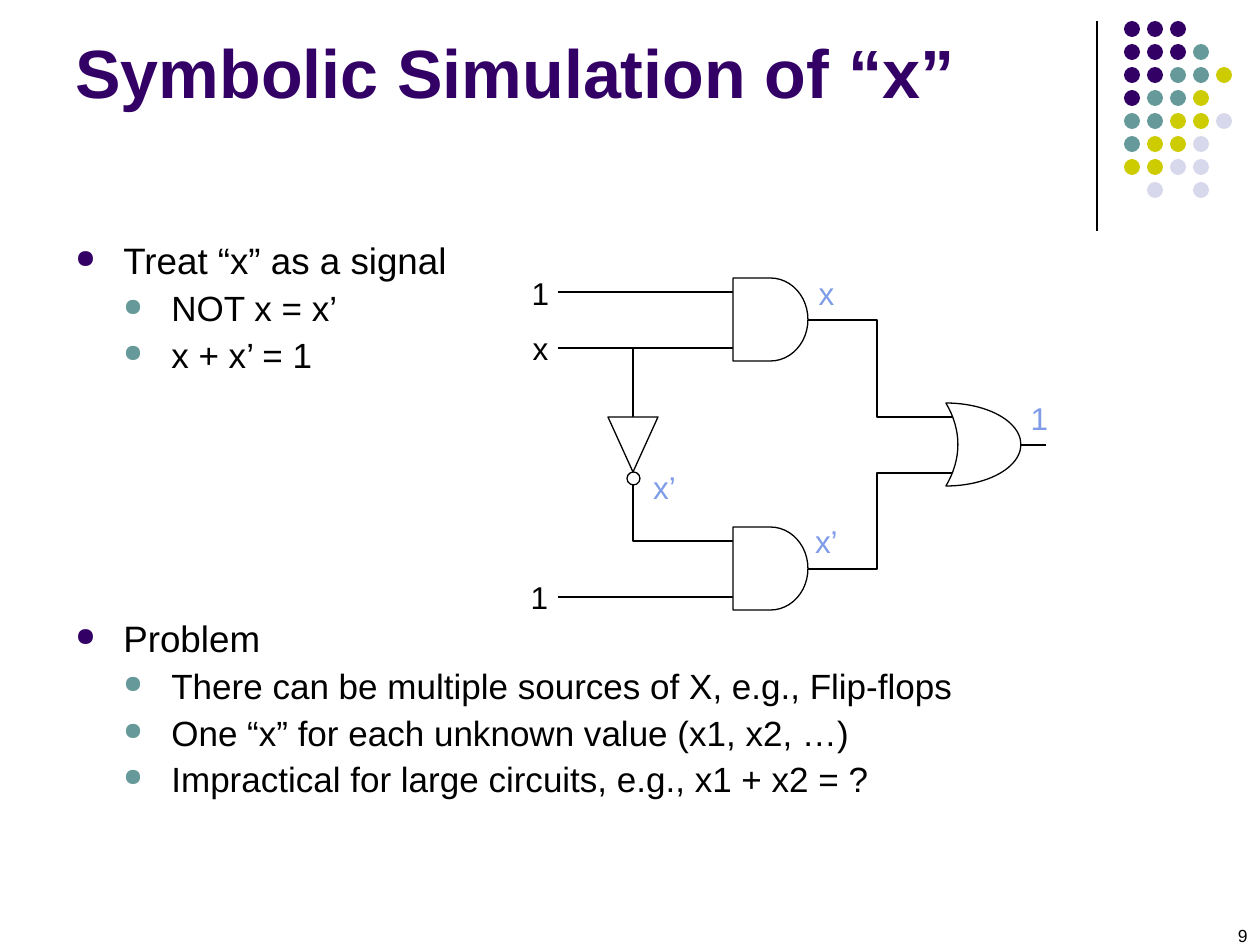
"""Builds the slide on symbolic simulation of an unknown signal x."""
from dataclasses import dataclass

from lxml import etree
from pptx import Presentation
from pptx.dml.color import RGBColor
from pptx.enum.shapes import MSO_CONNECTOR, MSO_SHAPE
from pptx.enum.text import MSO_ANCHOR, PP_ALIGN
from pptx.oxml.ns import qn
from pptx.util import Emu, Pt

STRAIGHT, ELBOW = MSO_CONNECTOR.STRAIGHT, MSO_CONNECTOR.ELBOW
OVAL, TRIANGLE = MSO_SHAPE.OVAL, MSO_SHAPE.ISOSCELES_TRIANGLE
AND_BODY, OR_BODY = MSO_SHAPE.FLOWCHART_DELAY, MSO_SHAPE.MOON
LABEL_BOX = MSO_SHAPE.FLOWCHART_PROCESS
LEFT, CENTER, RIGHT = PP_ALIGN.LEFT, PP_ALIGN.CENTER, PP_ALIGN.RIGHT
MIDDLE = MSO_ANCHOR.MIDDLE
EMU_PER_PX = 914400 / 126


def px(length):
    """Turn whole pixels into EMU."""
    return Emu(round(length * EMU_PER_PX))


@dataclass(frozen=True)
class Theme:
    """Colours, font and type sizes of the slide."""
    font: str = "Arial"
    ink: str = "000000"
    paper: str = "FFFFFF"
    purple: str = "330066"
    teal: str = "669999"
    olive: str = "CCCC00"
    lilac: str = "D8D8EC"
    signal: str = "7E9CE8"
    title: int = 39
    levels: tuple = (21, 20)
    label: int = 18
    number: int = 10
    stroke: float = 0.75


class Board:
    """Holds the theme and the current slide."""

    def __init__(self, slide, theme):
        """Keep the slide and its theme."""
        self.shapes, self.theme = slide.shapes, theme

    def run(self, paragraph, text, size, color, bold=False):
        """Add one styled run."""
        run = paragraph.add_run()
        run.text = text
        run.font.name, run.font.size, run.font.bold = self.theme.font, Pt(size), bold
        run.font.color.rgb = RGBColor.from_string(color)

    def text(self, box, text, size, color, align=LEFT, bold=False, inset=6):
        """Add a one-line text box."""
        frame = self.shapes.add_textbox(*map(px, box)).text_frame
        frame.word_wrap, frame.margin_top = True, px(inset)
        frame.paragraphs[0].alignment = align
        self.run(frame.paragraphs[0], text, size, color, bold)

    def bullets(self, box, items):
        """Add a list of (level, space before, text) items."""
        frame = self.shapes.add_textbox(*map(px, box)).text_frame
        frame.word_wrap = True
        for index, (level, space, text) in enumerate(items):
            paragraph = frame.add_paragraph() if index else frame.paragraphs[0]
            paragraph.level, paragraph.line_spacing = level, 0.9
            paragraph.space_before = Pt(space)
            props = paragraph._p.get_or_add_pPr()
            props.set("marL", str(px(48 * (level + 1))))
            props.set("indent", str(-px(48)))
            color = etree.SubElement(props, qn("a:buClr"))
            shade = (self.theme.purple, self.theme.teal)[level]
            etree.SubElement(color, qn("a:srgbClr"), val=shade)
            etree.SubElement(props, qn("a:buSzPct"), val="70000")
            etree.SubElement(props, qn("a:buChar"), char="●")
            self.run(paragraph, text, self.theme.levels[level], self.theme.ink)

    def shape(self, kind, box, fill=None, outlined=True):
        """Add a preset shape with an optional fill and outline."""
        shape = self.shapes.add_shape(kind, *map(px, box))
        shape.shadow.inherit = False
        if fill:
            shape.fill.solid()
            shape.fill.fore_color.rgb = RGBColor.from_string(fill)
        else:
            shape.fill.background()
        if outlined:
            shape.line.color.rgb = RGBColor.from_string(self.theme.ink)
            shape.line.width = Pt(self.theme.stroke)
        else:
            shape.line.fill.background()
        return shape

    def label(self, x, y, text, color):
        """Add a centred signal label."""
        frame = self.shape(LABEL_BOX, (x, y, 37, 55), outlined=False).text_frame
        frame.word_wrap, frame.vertical_anchor = False, MIDDLE
        frame.paragraphs[0].alignment = CENTER
        self.run(frame.paragraphs[0], text, self.theme.label, color)

    def wire(self, x1, y1, x2, y2, kind=STRAIGHT, single_bend=False):
        """Add a straight or bent wire."""
        wire = self.shapes.add_connector(kind, *map(px, (x1, y1, x2, y2)))
        wire.line.color.rgb = RGBColor.from_string(self.theme.ink)
        wire.line.width = Pt(self.theme.stroke)
        props = wire._element.spPr
        etree.SubElement(props, qn("a:effectLst"))
        if single_bend:
            props.find(qn("a:prstGeom")).set("prst", "bentConnector2")

    def gate(self, kind, x, y, input_length):
        """Add a two-input gate with its pins."""
        for pin in (14, 70):
            self.wire(x - 25, y + pin, x - 25 + input_length, y + pin)
        self.wire(x + 50, y + 42, x + 100, y + 42)
        return self.shape(kind, (x, y, 75, 83), self.theme.paper)

    def inverter(self, x, y):
        """Add a downward inverter with its pins."""
        self.wire(x, y + 97, x, y)
        self.shape(OVAL, (x - 6, y + 69, 13, 13), self.theme.paper)
        body = self.shape(TRIANGLE, (x - 25, y + 14, 50, 55), self.theme.paper)
        body.rotation = 180

    def dots(self, x, y, rows):
        """Add the corner grid of coloured dots."""
        colors = {"p": self.theme.purple, "t": self.theme.teal,
                  "o": self.theme.olive, "l": self.theme.lilac}
        for row, codes in enumerate(rows):
            for column, code in enumerate(codes):
                if code in colors:
                    box = (x + 23 * column, y + 23 * row, 16, 16)
                    self.shape(OVAL, box, colors[code], outlined=False)


def main():
    """Build and save the slide."""
    deck = Presentation()
    deck.slide_width, deck.slide_height = px(1260), px(945)
    theme = Theme()
    board = Board(deck.slides.add_slide(deck.slide_layouts[6]), theme)

    board.wire(1097, 21, 1097, 231)
    board.dots(1124, 21, ("ppp", "pppt", "pptto", "ptto", "ttool", "tool", "ooll", ".l.l"))
    board.text((966, 919, 294, 26), "9", theme.number, theme.ink, RIGHT)
    board.text((63, 16, 1040, 179), "Symbolic Simulation of “x”", theme.title,
               theme.purple, bold=True, inset=14)
    board.bullets((63, 237, 1134, 607), (
        (0, 5, "Treat “x” as a signal"),
        (1, 5, "NOT x = x’"),
        (1, 5, "x + x’ = 1"),
        (0, 140, "Problem"),
        (1, 5, "There can be multiple sources of X, e.g., Flip-flops"),
        (1, 5, "One “x” for each unknown value (x1, x2, …)"),
        (1, 5, "Impractical for large circuits, e.g., x1 + x2 = ?")))

    upper, lower = 278, 527
    for gate_top in (upper, lower):
        board.gate(AND_BODY, 733, gate_top, 50)
    either = board.gate(OR_BODY, 946, 403, 49)
    either.adjustments[0] = 0.84
    either._element.spPr.find(qn("a:xfrm")).set("flipH", "1")
    board.inverter(633, 403)

    for y in (upper + 14, upper + 70, lower + 70):
        board.wire(558, y, 708, y)
    board.wire(558, 348, 633, 403, ELBOW, single_bend=True)
    board.wire(708, 541, 633, 500, ELBOW, single_bend=True)
    board.wire(833, 320, 921, 417, ELBOW)
    board.wire(833, 569, 921, 473, ELBOW)

    for x, y, text in ((522, 265, "1"), (522, 320, "x"), (521, 569, "1")):
        board.label(x, y, text, theme.ink)
    for x, y, text in ((646, 459, "x’"), (808, 513, "x’"), (1021, 390, "1"), (808, 265, "x")):
        board.label(x, y, text, theme.signal)
    deck.save("out.pptx")


if __name__ == "__main__":
    main()
